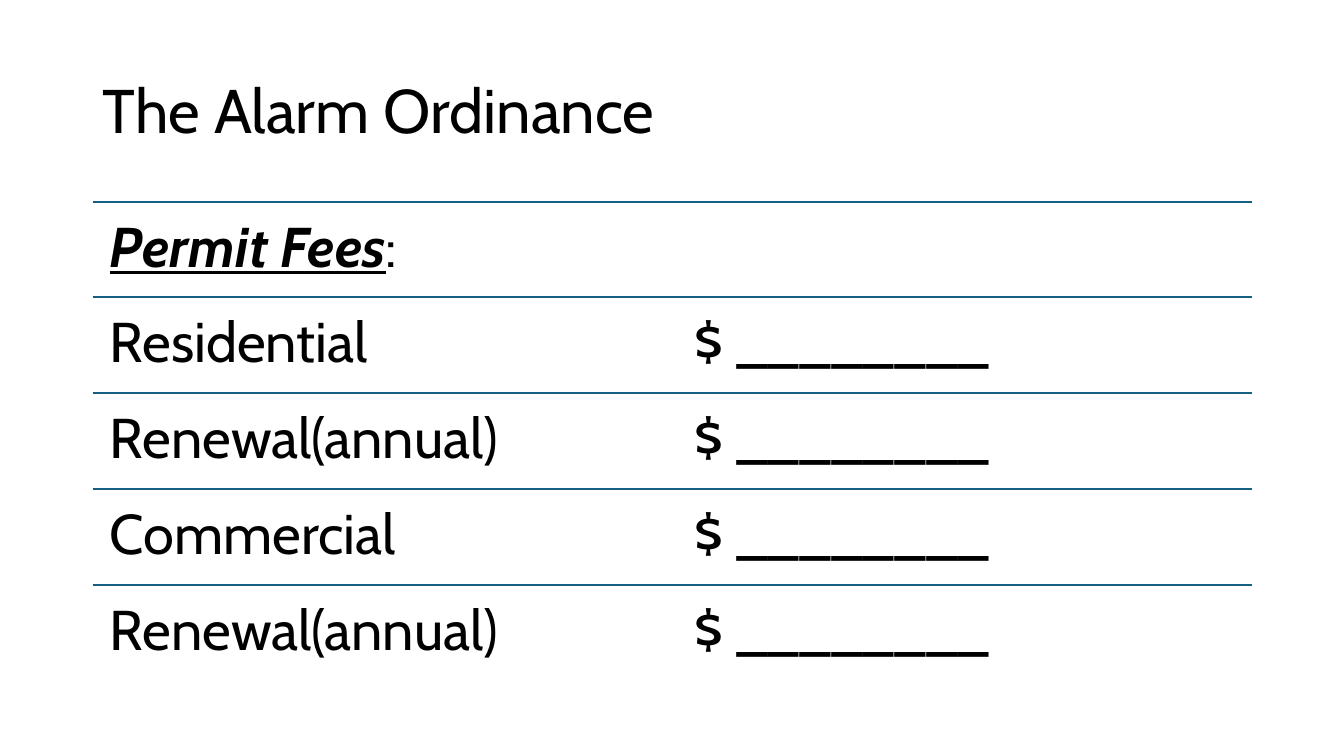
from dataclasses import dataclass

from lxml import etree
from pptx import Presentation
from pptx.dml.color import RGBColor
from pptx.enum.shapes import MSO_CONNECTOR
from pptx.enum.text import MSO_ANCHOR, MSO_AUTO_SIZE, PP_ALIGN
from pptx.oxml.ns import qn
from pptx.util import Inches, Pt

STRAIGHT = MSO_CONNECTOR.STRAIGHT
TOP, MIDDLE = MSO_ANCHOR.TOP, MSO_ANCHOR.MIDDLE
LEFT = PP_ALIGN.LEFT
NO_FIT = MSO_AUTO_SIZE.NONE


@dataclass(frozen=True)
class Theme:
    font: str = "Cabin"
    ink: str = "000000"
    rule: str = "156082"
    paper: str = "FFFFFF"
    title_size: float = 44
    row_size: float = 40
    rule_width: float = 1.5
    spacing: float = 0.9
    inset: float = 0.17
    amount_tab: float = 5.8


@dataclass(frozen=True)
class Grid:
    left: float = 0.92
    top: float = 2
    width: float = 11.5
    row: float = 0.95

    def y(self, row):
        return Inches(self.top + row * self.row)


def add_text(p, text, *, font, size, color, bold=False, italic=False, underline=False):
    r = p.add_run()
    r.text = text
    f = r.font
    f.name, f.size = font, Pt(size)
    f.bold, f.italic, f.underline = bold, italic, underline
    f.color.rgb = RGBColor.from_string(color)


class FeeSlide:
    def __init__(self, prs, theme, grid):
        self.theme, self.grid = theme, grid
        self.s = prs.slides.add_slide(prs.slide_layouts[5])
        fill = self.s.background.fill
        fill.solid()
        fill.fore_color.rgb = RGBColor.from_string(theme.paper)

    def frame(self, sp, anchor):
        tf = sp.text_frame
        tf.word_wrap = True
        tf.auto_size = NO_FIT
        tf.vertical_anchor = anchor
        p = tf.paragraphs[0]
        p.alignment = LEFT
        p.line_spacing = self.theme.spacing
        return tf, p

    def title(self, text):
        t, g = self.theme, self.grid
        sp = self.s.shapes.title
        sp.left, sp.top = Inches(g.left), Inches(0.4)
        sp.width, sp.height = Inches(g.width), Inches(1.45)
        tf, p = self.frame(sp, MIDDLE)
        add_text(p, text, font=t.font, size=t.title_size, color=t.ink)

    def rule(self, row):
        t, g = self.theme, self.grid
        y = g.y(row)
        line = self.s.shapes.add_connector(
            STRAIGHT, Inches(g.left), y, Inches(g.left + g.width), y)
        line.line.color.rgb = RGBColor.from_string(t.rule)
        line.line.width = Pt(t.rule_width)
        etree.SubElement(line._element.spPr, qn("a:effectLst"))

    def row(self, row, runs):
        t, g = self.theme, self.grid
        sp = self.s.shapes.add_textbox(
            Inches(g.left), g.y(row), Inches(g.width), Inches(g.row))
        tf, p = self.frame(sp, TOP)
        tf.margin_left = tf.margin_right = Inches(t.inset)
        tf.margin_top = tf.margin_bottom = Inches(t.inset)
        tabs = etree.SubElement(p._p.get_or_add_pPr(), qn("a:tabLst"))
        etree.SubElement(tabs, qn("a:tab"), pos=str(Inches(t.amount_tab)), algn="l")
        for text, style in runs:
            add_text(p, text, font=t.font, size=t.row_size, color=t.ink, **style)


def main():
    prs = Presentation()
    prs.slide_width, prs.slide_height = Inches(13.33), Inches(7.5)
    slide = FeeSlide(prs, Theme(), Grid())
    slide.title("The Alarm Ordinance")

    heading = [("Permit Fees", dict(bold=True, italic=True, underline=True)), (":", {})]
    fees = ["Residential", "Renewal(annual)", "Commercial", "Renewal(annual)"]
    rows = [heading] + [[(f"{fee}\t$ ________", {})] for fee in fees]
    for i, runs in enumerate(rows):
        slide.rule(i)
        slide.row(i, runs)

    prs.save("out.pptx")


if __name__ == "__main__":
    main()
